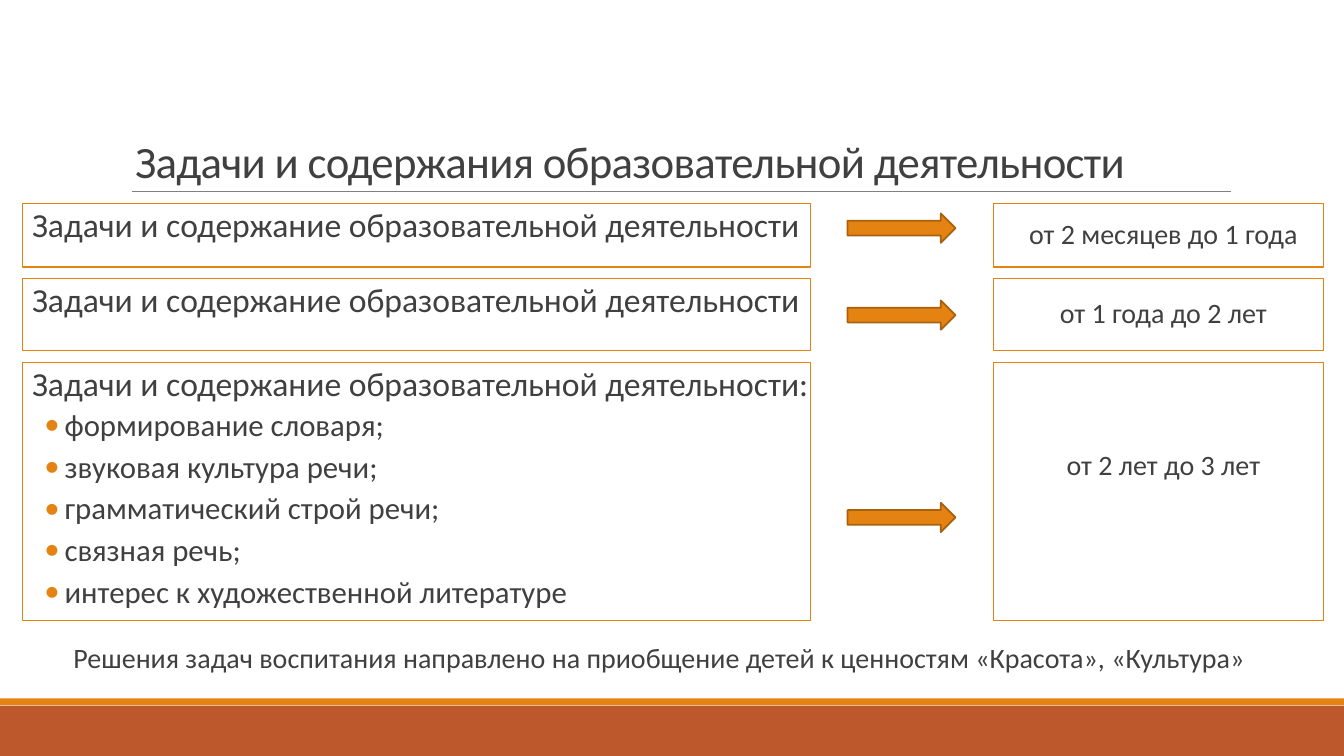
from dataclasses import dataclass

from lxml.etree import SubElement
from pptx import Presentation
from pptx.dml.color import RGBColor
from pptx.enum.shapes import MSO_CONNECTOR, MSO_SHAPE
from pptx.enum.text import MSO_ANCHOR, PP_ALIGN
from pptx.oxml.ns import qn
from pptx.shapes.autoshape import Shape
from pptx.slide import Slide
from pptx.text.text import TextFrame, _Paragraph as Paragraph
from pptx.util import Cm, Pt

FONT = "Calibri"
TEXT, ORANGE, RUST = "404040", "E48312", "BD582C"
ARROW_LINE, RULE = "A9610D", "808080"
SLIDE_WIDTH, SLIDE_HEIGHT = 33.87, 19.05
TASK_LEFT, TASK_WIDTH = 0.56, 19.86
ARROW_LEFT, ARROW_WIDTH, ARROW_HEIGHT = 21.36, 2.72, 0.74
AGE_LEFT, AGE_WIDTH = 25.04, 8.31
TASK = "Задачи и содержание образовательной деятельности"


@dataclass(frozen=True)
class AgeRow:
    top: float
    height: float
    arrow_top: float
    task: str
    age: str
    topics: tuple[str, ...] = ()
    age_bottom_inset: float = 0.13


ROWS = (
    AgeRow(5.13, 1.6, 5.38, TASK, "от 2 месяцев до 1 года"),
    AgeRow(7.01, 1.83, 7.57, TASK, "от 1 года до 2 лет"),
    AgeRow(
        9.14, 6.5, 12.67, TASK + ":", "от 2 лет до 3 лет",
        (
            "формирование словаря;",
            "звуковая культура речи;",
            "грамматический строй речи;",
            "связная речь;",
            "интерес к художественной литературе",
        ),
        age_bottom_inset=1.4,
    ),
)


def color(value: str) -> RGBColor:
    return RGBColor.from_string(value)


def add_block(slide: Slide, kind: MSO_SHAPE, left: float, top: float, width: float,
              height: float, fill: str | None = None, line: str | None = None,
              line_width: float = 0.75) -> Shape:
    shape = slide.shapes.add_shape(kind, Cm(left), Cm(top), Cm(width), Cm(height))
    shape.shadow.inherit = False
    if fill:
        shape.fill.solid()
        shape.fill.fore_color.rgb = color(fill)
    else:
        shape.fill.background()
    if line:
        shape.line.color.rgb = color(line)
        shape.line.width = Pt(line_width)
    else:
        shape.line.fill.background()
    return shape


def prepare_frame(frame: TextFrame, anchor: MSO_ANCHOR, bottom_inset: float = 0.13) -> None:
    frame.word_wrap = True
    frame.vertical_anchor = anchor
    frame.margin_left = frame.margin_right = 0
    frame.margin_top, frame.margin_bottom = Cm(0.13), Cm(bottom_inset)


def format_paragraph(paragraph: Paragraph, size: float, indent: float = 0.25,
                     alignment: PP_ALIGN = PP_ALIGN.LEFT, spacing: float = 0.9) -> None:
    paragraph.alignment = alignment
    paragraph.line_spacing = spacing
    paragraph._p.get_or_add_pPr().set("marL", str(Cm(indent)))
    for run in paragraph.runs:
        run.font.name = FONT
        run.font.size = Pt(size)
        run.font.color.rgb = color(TEXT)


def add_topic(frame: TextFrame, topic: str) -> None:
    paragraph = frame.add_paragraph()
    paragraph.text = topic
    paragraph.space_before, paragraph.space_after = Pt(2), Pt(4)
    properties = paragraph._p.get_or_add_pPr()
    properties.set("indent", str(Cm(-0.51)))
    bullet_color = SubElement(properties, qn("a:buClr"))
    SubElement(bullet_color, qn("a:srgbClr"), val=ORANGE)
    SubElement(properties, qn("a:buFont"), typeface=FONT)
    SubElement(properties, qn("a:buChar"), char="•")
    format_paragraph(paragraph, 22, indent=1.07)


def add_row(slide: Slide, row: AgeRow) -> None:
    task_box = add_block(slide, MSO_SHAPE.RECTANGLE, TASK_LEFT, row.top, TASK_WIDTH,
                         row.height, line=ORANGE)
    task_frame = task_box.text_frame
    prepare_frame(task_frame, MSO_ANCHOR.TOP)
    task_frame.text = row.task
    task_frame.paragraphs[0].space_after = Pt(2)
    format_paragraph(task_frame.paragraphs[0], 24)
    for topic in row.topics:
        add_topic(task_frame, topic)

    add_block(slide, MSO_SHAPE.RIGHT_ARROW, ARROW_LEFT, row.arrow_top, ARROW_WIDTH,
              ARROW_HEIGHT, ORANGE, ARROW_LINE, 1.25)

    age_box = add_block(slide, MSO_SHAPE.RECTANGLE, AGE_LEFT, row.top, AGE_WIDTH,
                        row.height, line=ORANGE)
    prepare_frame(age_box.text_frame, MSO_ANCHOR.MIDDLE, row.age_bottom_inset)
    age_box.text_frame.text = row.age
    format_paragraph(age_box.text_frame.paragraphs[0], 20, alignment=PP_ALIGN.CENTER)


def add_title(slide: Slide) -> None:
    title = slide.shapes.title
    title.left, title.top = Cm(3.15), Cm(1.52)
    title.width, title.height = Cm(27.94), Cm(3.33)
    title.text_frame.text = "Задачи и содержания образовательной деятельности"
    title.text_frame.vertical_anchor = MSO_ANCHOR.BOTTOM
    paragraph = title.text_frame.paragraphs[0]
    format_paragraph(paragraph, 32, indent=0, spacing=0.85)
    paragraph.runs[0]._r.get_or_add_rPr().set("spc", "-50")


def add_title_rule(slide: Slide) -> None:
    rule = slide.shapes.add_connector(
        MSO_CONNECTOR.STRAIGHT, Cm(3.33), Cm(4.83), Cm(31.01), Cm(4.83))
    rule.line.color.rgb = color(RULE)
    rule.line.width = Pt(0.5)
    SubElement(rule._element.spPr, qn("a:effectLst"))


def add_conclusion(slide: Slide) -> None:
    box = slide.shapes.add_textbox(Cm(1.6), Cm(16.1), Cm(31.5), Cm(1.3))
    prepare_frame(box.text_frame, MSO_ANCHOR.TOP)
    box.text_frame.text = ("Решения задач воспитания направлено на приобщение детей "
                           "к ценностям «Красота», «Культура»")
    format_paragraph(box.text_frame.paragraphs[0], 20)


def main() -> None:
    presentation = Presentation()
    presentation.slide_width = Cm(SLIDE_WIDTH)
    presentation.slide_height = Cm(SLIDE_HEIGHT)
    slide = presentation.slides.add_slide(presentation.slide_layouts.get_by_name("Title Only"))

    add_block(slide, MSO_SHAPE.RECTANGLE, 0, 17.78, SLIDE_WIDTH, 1.27, RUST)
    add_block(slide, MSO_SHAPE.RECTANGLE, 0, 17.6, SLIDE_WIDTH, 0.17, ORANGE)
    add_title_rule(slide)
    add_title(slide)
    for row in ROWS:
        add_row(slide, row)
    add_conclusion(slide)
    presentation.save("out.pptx")


if __name__ == "__main__":
    main()
